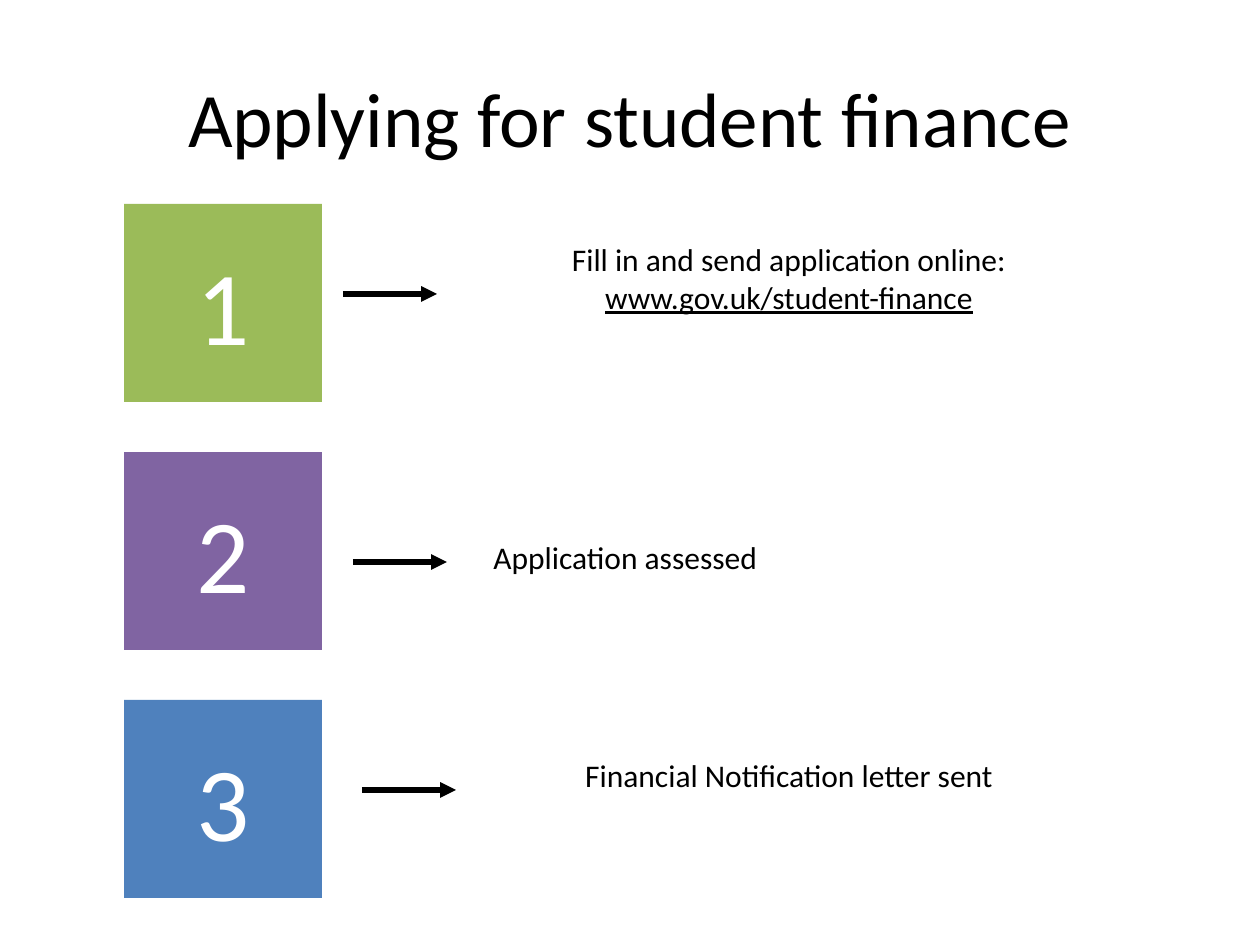
from dataclasses import dataclass

from lxml import etree
from pptx import Presentation
from pptx.dml.color import RGBColor
from pptx.enum.shapes import MSO_CONNECTOR, MSO_SHAPE
from pptx.enum.text import MSO_ANCHOR, PP_ALIGN
from pptx.oxml.ns import qn
from pptx.util import Emu, Pt

STRAIGHT = MSO_CONNECTOR.STRAIGHT
RECTANGLE = MSO_SHAPE.RECTANGLE
MIDDLE, TOP = MSO_ANCHOR.MIDDLE, MSO_ANCHOR.TOP
CENTER, LEFT = PP_ALIGN.CENTER, PP_ALIGN.LEFT

PX_PER_INCH = 126
TILE_LEFT, TILE_TOP, TILE_SIZE, TILE_PITCH = 124, 204, 198, 248
ARROW_LENGTH = 94
NOTE_WIDTH, NOTE_HEIGHT = 774, 115


@dataclass(frozen=True)
class Theme:
    font: str = "Calibri"
    ink: str = "000000"
    paper: str = "FFFFFF"
    green: str = "9BBB59"
    purple: str = "8064A2"
    blue: str = "4F81BD"
    title_size: int = 44
    number_size: int = 60
    note_size: int = 18
    arrow_width: int = 3


@dataclass(frozen=True)
class Step:
    fill: str
    arrow_left: int
    arrow_y: int
    note_left: int
    note_top: int
    note: str
    link: str = ""
    align: PP_ALIGN = CENTER


THEME = Theme()
STEPS = (
    Step(THEME.green, 343, 294, 402, 234,
         "Fill in and send application online:", "www.gov.uk/student-finance"),
    Step(THEME.purple, 353, 562, 481, 532, "Application assessed", align=LEFT),
    Step(THEME.blue, 362, 790, 402, 750, "Financial Notification letter sent"),
)


def px(length: int) -> Emu:
    return Emu(round(length * 914400 / PX_PER_INCH))


def write(frame, lines: list[str], size: int, color: str, align, anchor) -> None:
    frame.word_wrap = True
    frame.vertical_anchor = anchor
    frame.text = "\n".join(lines)
    font_format = {"name": THEME.font, "size": Pt(size)}
    for para in frame.paragraphs:
        para.alignment = align
        for span in para.runs:
            for name, value in font_format.items():
                setattr(span.font, name, value)
            span.font.color.rgb = RGBColor.from_string(color)


def add_title(page, text: str) -> None:
    title = page.shapes.title
    place = {"left": 63, "top": 38, "width": 1134, "height": 158}
    for name, value in place.items():
        setattr(title, name, px(value))
    write(title.text_frame, [text], THEME.title_size, THEME.ink, CENTER, MIDDLE)


def add_tile(page, index: int, step: Step) -> None:
    tile = page.shapes.add_shape(
        RECTANGLE, px(TILE_LEFT), px(TILE_TOP + index * TILE_PITCH),
        px(TILE_SIZE), px(TILE_SIZE))
    tile.shadow.inherit = False
    tile.fill.solid()
    tile.fill.fore_color.rgb = RGBColor.from_string(step.fill)
    tile.line.fill.background()
    write(tile.text_frame, [str(index + 1)], THEME.number_size, THEME.paper,
          CENTER, MIDDLE)


def add_note(page, step: Step) -> None:
    box = page.shapes.add_textbox(
        px(step.note_left), px(step.note_top), px(NOTE_WIDTH), px(NOTE_HEIGHT))
    lines = [line for line in (step.note, step.link) if line]
    write(box.text_frame, lines, THEME.note_size, THEME.ink, step.align, TOP)
    if step.link:
        box.text_frame.paragraphs[-1].runs[0].font.underline = True


def add_arrow(page, step: Step) -> None:
    arrow = page.shapes.add_connector(
        STRAIGHT, px(step.arrow_left), px(step.arrow_y),
        px(step.arrow_left + ARROW_LENGTH), px(step.arrow_y))
    arrow.line.width = Pt(THEME.arrow_width)
    arrow.line.color.rgb = RGBColor.from_string(THEME.ink)
    properties = arrow.element.spPr
    etree.SubElement(properties.find(qn("a:ln")), qn("a:tailEnd"), type="triangle")
    etree.SubElement(properties, qn("a:effectLst"))


def main() -> None:
    deck = Presentation()
    deck.slide_width, deck.slide_height = px(1260), px(945)
    page = deck.slides.add_slide(deck.slide_layouts.get_by_name("Title Only"))
    add_title(page, "Applying for student finance")
    for index, step in enumerate(STEPS):
        add_tile(page, index, step)
    for step in STEPS:
        add_note(page, step)
    for step in STEPS:
        add_arrow(page, step)
    deck.save("out.pptx")


if __name__ == "__main__":
    main()
